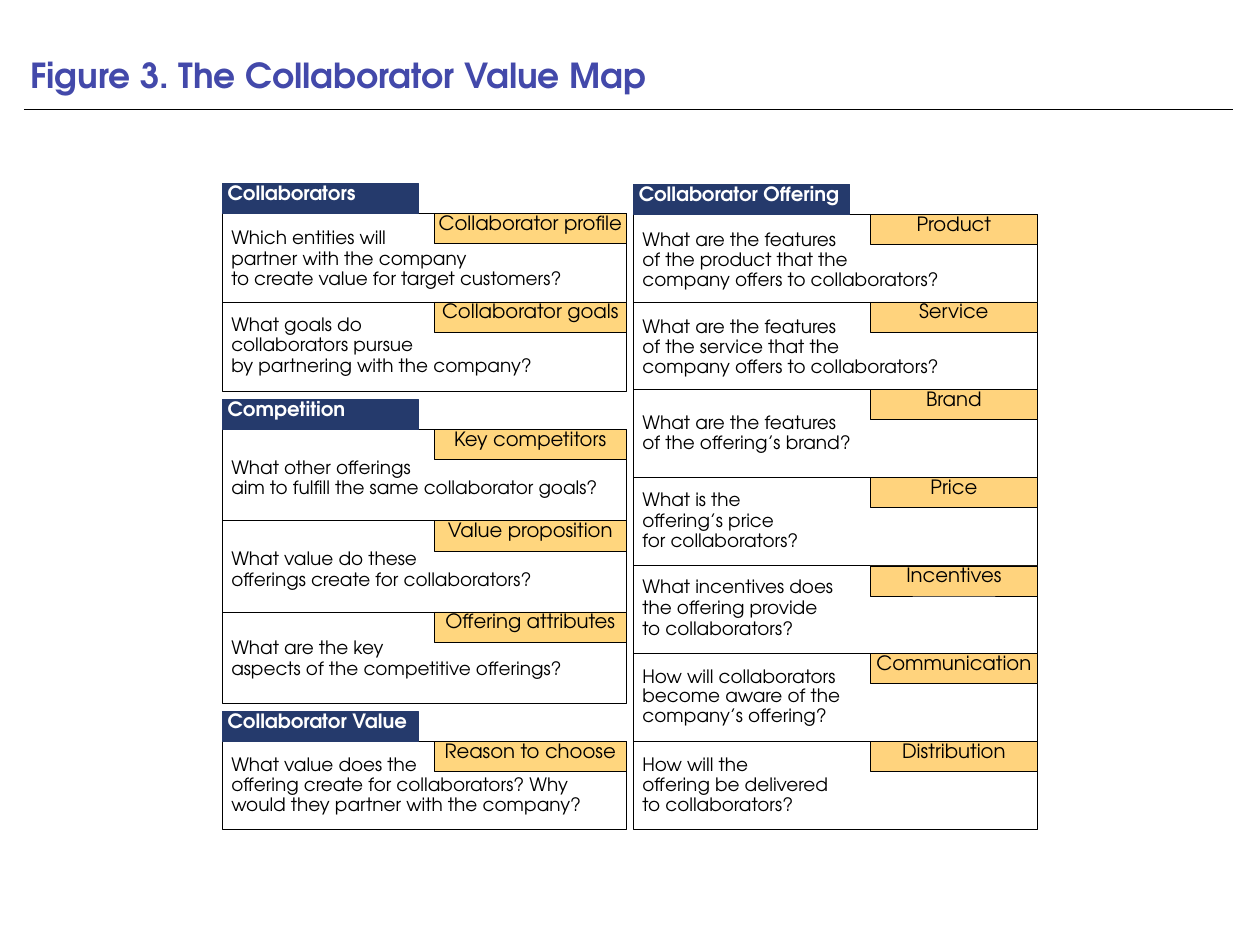
from copy import deepcopy

from lxml.etree import SubElement
from pptx import Presentation
from pptx.dml.color import RGBColor
from pptx.enum.shapes import MSO_CONNECTOR as CONN, MSO_SHAPE as SHAPE
from pptx.enum.text import MSO_ANCHOR as ANCHOR, PP_ALIGN as ALIGN
from pptx.oxml.ns import qn
from pptx.util import Emu, Pt

PX = 9144  # EMU per px, 100 px to the inch
FONT = "TeX Gyre Adventor"
COLORS = {
    "black": "000000",
    "white": "FFFFFF",
    "title": "4349AA",
    "navy": "253A6C",
    "gold_left": "FFD67E",
    "gold_right": "FFD37D",
}
BODY_W, BAR_H, QUESTION_H = 456, 34, 78

# Column: left edge, header width, tag width, question width, tag colour
LEFT = (251, 221, 217, 438, "gold_left")
RIGHT = (715, 244, 189, 393, "gold_right")

# Section: column, header, body top, body height, rows
# Row: tag, question paragraphs, question shift from the row centre
SECTIONS = [
    (RIGHT, "Collaborator Offering", 242, 695, [
        ("Product", ["What are the features\nof the product that the\n"
                     "company offers to collaborators?"], 3),
        ("Service", ["What are the features\nof the service that the\n"
                     "company offers to collaborators?"], 2),
        ("Brand", ["What are the features\nof the offering’s brand?"], 1),
        ("Price", ["What is the", "offering’s price\nfor collaborators?"], 0),
        ("Incentives", ["What incentives does", "the offering provide",
                        "to collaborators?"], -1),
        ("Communication", ["How will collaborators\nbecome aware of the\n"
                           "company’s offering?"], 0),
        ("Distribution", ["How will the\noffering be delivered\n"
                          "to collaborators?"], 1),
    ]),
    (LEFT, "Collaborator Value", 837, 100, [
        ("Reason to choose", ["What value does the\noffering create for collaborators? "
                              "Why would they partner with the company?"], 0),
    ]),
    (LEFT, "Collaborators", 241, 201, [
        ("Collaborator profile", ["Which entities will", "partner with the company\n"
                                  "to create value for target customers?"], 1),
        ("Collaborator goals", ["What goals do\ncollaborators pursue",
                                "by partnering with the company?"], 0),
    ]),
    (LEFT, "Competition", 485, 309, [
        ("Key competitors", ["What other offerings\n"
                             "aim to fulfill the same collaborator goals?"], 4),
        ("Value proposition", ["What value do these",
                               "offerings create for collaborators?"], 5),
        ("Offering attributes", ["What are the key",
                                 "aspects of the competitive offerings?"], 2),
    ]),
]


def px(n):
    return Emu(n * PX)


def rgb(name):
    return RGBColor.from_string(COLORS[name])


def write(sp, paragraphs, size, color, bold=False, align=ALIGN.LEFT,
          anchor=ANCHOR.TOP, spacing=0.9, before=0, left=0, inset=0):
    tf = sp.text_frame
    tf.word_wrap = True
    tf.vertical_anchor = anchor
    tf.margin_left = px(left or inset)
    tf.margin_top = tf.margin_right = tf.margin_bottom = px(inset)
    for i, text in enumerate(paragraphs):
        p = tf.add_paragraph() if i else tf.paragraphs[0]
        p.text = text
        p.alignment = align
        p.line_spacing = spacing
        p.space_before = Pt(before)
        for r in p.runs:
            r.font.name, r.font.size, r.font.bold = FONT, Pt(size), bold
            r.font.color.rgb = rgb(color)
        # Line breaks take the size of the runs around them
        for br in p._p.findall(qn("a:br")):
            br.append(deepcopy(p.runs[0]._r.rPr))


def add_box(slide, x, y, w, h, fill=None, line="black", weight=0.75):
    sp = slide.shapes.add_shape(SHAPE.RECTANGLE, px(x), px(y), px(w), px(h))
    sp.shadow.inherit = False
    if fill:
        sp.fill.solid()
        sp.fill.fore_color.rgb = rgb(fill)
    else:
        sp.fill.background()
    sp.line.color.rgb = rgb(line)
    sp.line.width = Pt(weight)
    return sp


def add_rule(slide, x, y, w, weight=0.75):
    c = slide.shapes.add_connector(CONN.STRAIGHT, px(x), px(y), px(x + w), px(y))
    c.line.color.rgb = rgb("black")
    c.line.width = Pt(weight)
    SubElement(c._element.spPr, qn("a:effectLst"))


def add_text(slide, x, y, w, h, paragraphs, size, color, **style):
    sp = slide.shapes.add_textbox(px(x), px(y), px(w), px(h))
    write(sp, paragraphs, size, color, **style)


def add_section(slide, column, header, top, height, rows):
    x, header_w, tag_w, question_w, gold = column
    add_box(slide, x, top, BODY_W, height)
    sp = add_box(slide, x, top - BAR_H, header_w, BAR_H, "navy", "navy", 1)
    write(sp, [header], 16, "white", bold=True, left=6)

    for i, (tag, question, shift) in enumerate(rows):
        y = top + height * i // len(rows)
        row_h = height // len(rows)
        if i:
            add_rule(slide, x, y, BODY_W)
        add_text(slide, x + 10, y + (row_h - QUESTION_H) // 2 + shift,
                 question_w, QUESTION_H, question, 15, "black",
                 anchor=ANCHOR.MIDDLE, before=1)
        sp = add_box(slide, x + BODY_W - tag_w, y, tag_w, BAR_H, gold, weight=0.5)
        write(sp, [tag], 16, "black", align=ALIGN.CENTER)


def main():
    prs = Presentation()
    prs.slide_width, prs.slide_height = px(1422), px(1067)
    slide = prs.slides.add_slide(prs.slide_layouts[6])

    # Title and its rule
    add_rule(slide, 27, 124, 1365, 0.5)
    add_text(slide, 27, 0, 1364, 115, ["Figure 3. The Collaborator Value Map"],
             28, "title", bold=True, anchor=ANCHOR.BOTTOM, spacing=1.0, inset=7)

    # Value map
    for section in SECTIONS:
        add_section(slide, *section)

    prs.save("out.pptx")


if __name__ == "__main__":
    main()
